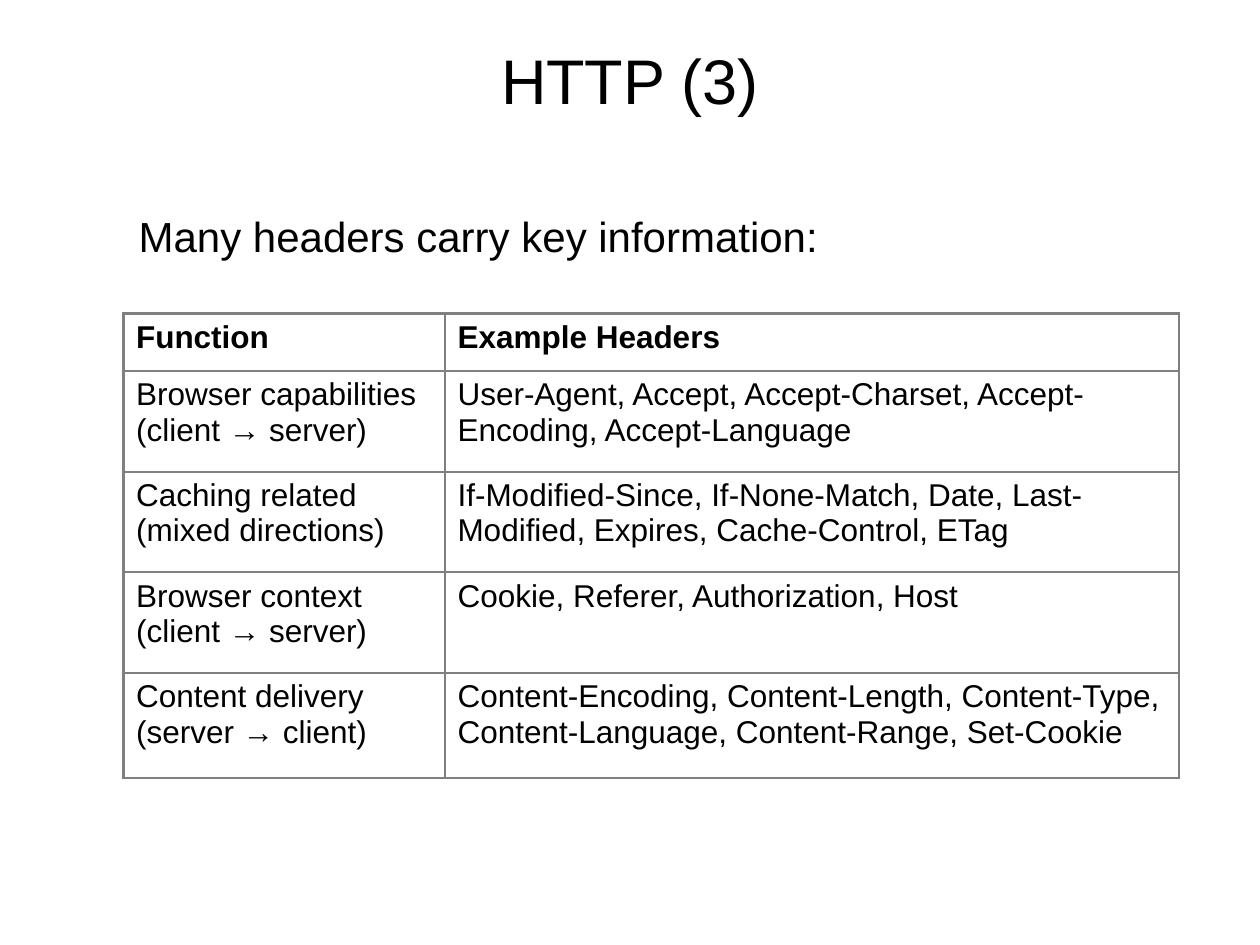
from dataclasses import dataclass

from lxml import etree
from pptx import Presentation
from pptx.dml.color import RGBColor
from pptx.enum.text import MSO_ANCHOR, MSO_AUTO_SIZE, PP_ALIGN
from pptx.oxml.ns import qn
from pptx.slide import Slide
from pptx.table import _Cell
from pptx.text.text import TextFrame
from pptx.util import Cm, Pt

BLACK = RGBColor(0x00, 0x00, 0x00)
WHITE = RGBColor(0xFF, 0xFF, 0xFF)
GRAY = RGBColor(0x80, 0x80, 0x80)
MIDDLE = MSO_ANCHOR.MIDDLE
TOP = MSO_ANCHOR.TOP
NO_AUTOFIT = MSO_AUTO_SIZE.NONE
CENTER = PP_ALIGN.CENTER
LEFT = PP_ALIGN.LEFT

FONT = "Arial"
BORDER_WIDTH = Pt(1.5)
COLUMN_WIDTHS = (Cm(6.48), Cm(14.8))


@dataclass(frozen=True)
class HeaderRow:
    function: str
    examples: str
    height: Cm
    bold: bool = False


HEADER_ROWS = (
    HeaderRow("Function", "Example Headers", Cm(1.16), True),
    HeaderRow(
        "Browser capabilities\n(client → server)",
        "User-Agent, Accept, Accept-Charset, Accept-Encoding, Accept-Language",
        Cm(2.03),
    ),
    HeaderRow(
        "Caching related\n(mixed directions)",
        "If-Modified-Since, If-None-Match, Date, Last-Modified, Expires, "
        "Cache-Control, ETag",
        Cm(2.03),
    ),
    HeaderRow(
        "Browser context\n(client → server)",
        "Cookie, Referer, Authorization, Host",
        Cm(2.03),
    ),
    HeaderRow(
        "Content delivery\n(server → client)",
        "Content-Encoding, Content-Length, Content-Type, Content-Language, "
        "Content-Range, Set-Cookie",
        Cm(2.11),
    ),
)


def write_text(
    text_frame: TextFrame,
    text: str,
    size: int,
    alignment: PP_ALIGN = LEFT,
    bold: bool = False,
) -> None:
    text_frame.text = text
    text_frame.word_wrap = True
    for paragraph in text_frame.paragraphs:
        paragraph.alignment = alignment
        for run in paragraph.runs:
            run.font.name = FONT
            run.font.size = Pt(size)
            run.font.bold = bold
            run.font.color.rgb = BLACK


def add_title(slide: Slide) -> None:
    title = slide.shapes.title
    title.left, title.top, title.width, title.height = Cm(0), Cm(0), Cm(25.4), Cm(3.18)
    write_text(title.text_frame, "HTTP (3)", 36, CENTER)
    title.text_frame.vertical_anchor = MIDDLE
    title.text_frame.auto_size = NO_AUTOFIT


def add_body(slide: Slide) -> None:
    body = slide.placeholders[1]
    body.left, body.top, body.width, body.height = Cm(2.54), Cm(4.11), Cm(21.64), Cm(12.78)
    write_text(body.text_frame, "Many headers carry key information:", 24)
    body.text_frame.auto_size = NO_AUTOFIT
    paragraph = body.text_frame.paragraphs[0]
    paragraph.space_before = Pt(18)
    properties = paragraph._p.get_or_add_pPr()
    properties.set("marL", "0")
    properties.set("indent", "0")
    etree.SubElement(properties, qn("a:buNone"))


def add_borders(cell: _Cell) -> None:
    properties = cell._tc.get_or_add_tcPr()
    for position, side in enumerate(("a:lnL", "a:lnR", "a:lnT", "a:lnB")):
        line = etree.Element(qn(side), w=str(BORDER_WIDTH))
        fill = etree.SubElement(line, qn("a:solidFill"))
        etree.SubElement(fill, qn("a:srgbClr"), val=str(GRAY))
        properties.insert(position, line)


def fill_cell(cell: _Cell, text: str, bold: bool) -> None:
    write_text(cell.text_frame, text, 18, bold=bold)
    cell.vertical_anchor = TOP
    cell.fill.solid()
    cell.fill.fore_color.rgb = WHITE
    add_borders(cell)


def add_header_table(slide: Slide) -> None:
    table = slide.shapes.add_table(
        len(HEADER_ROWS),
        len(COLUMN_WIDTHS),
        Cm(2.49),
        Cm(6.32),
        sum(COLUMN_WIDTHS),
        sum(row.height for row in HEADER_ROWS),
    ).table
    for column, width in zip(table.columns, COLUMN_WIDTHS):
        column.width = width
    for table_row, header_row in zip(table.rows, HEADER_ROWS):
        table_row.height = header_row.height
        texts = (header_row.function, header_row.examples)
        for cell, text in zip(table_row.cells, texts):
            fill_cell(cell, text, header_row.bold)


def main() -> None:
    presentation = Presentation()
    presentation.slide_width = Cm(25.4)
    presentation.slide_height = Cm(19.05)
    slide = presentation.slides.add_slide(presentation.slide_layouts[1])
    add_title(slide)
    add_body(slide)
    add_header_table(slide)
    presentation.save("out.pptx")


if __name__ == "__main__":
    main()
